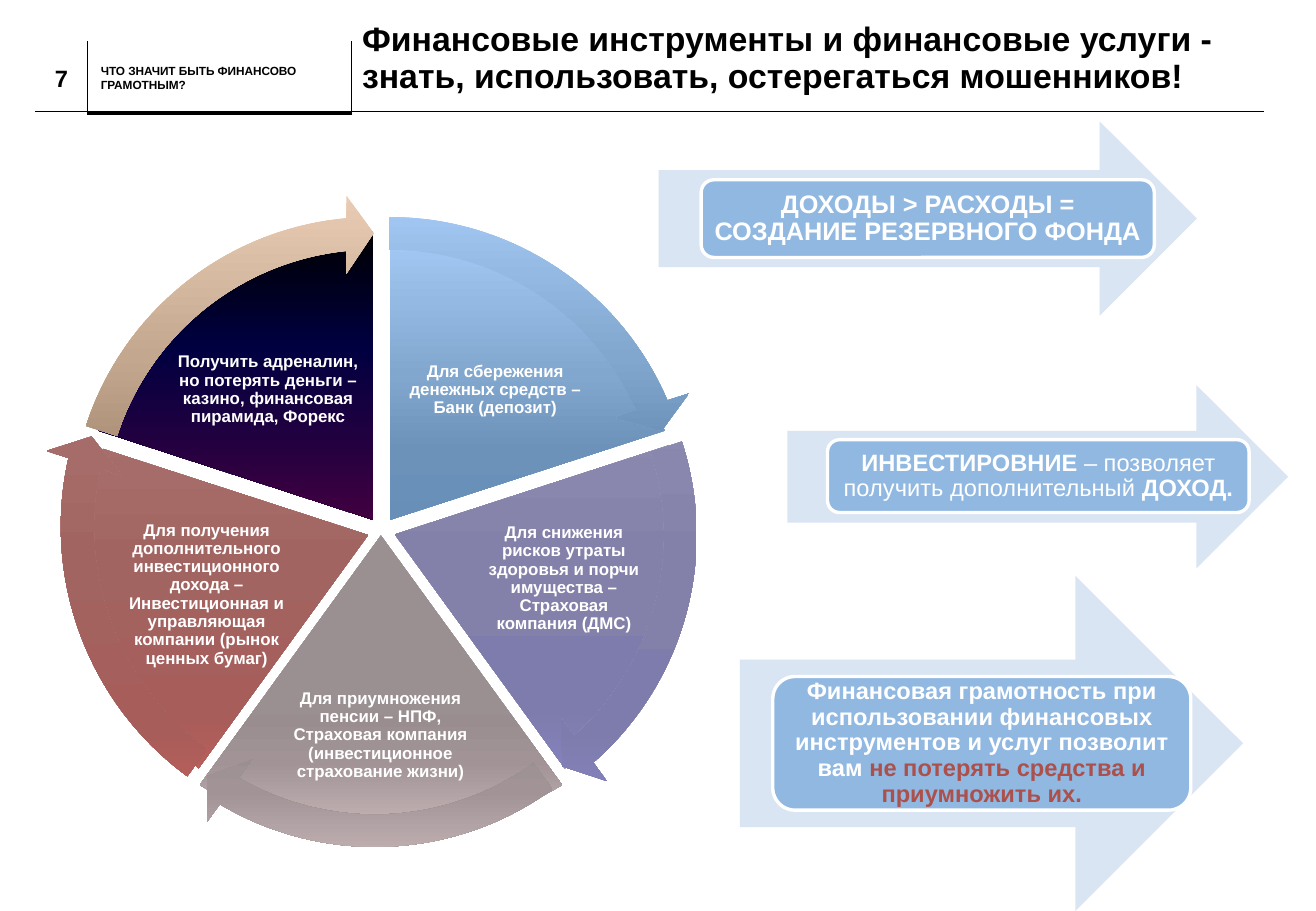
"""Build the slide on financial instruments and services."""
from dataclasses import dataclass

from lxml import etree
from pptx import Presentation
from pptx import util as u
from pptx.dml.color import RGBColor
from pptx.enum import shapes, text
from pptx.oxml.ns import qn

FONT = "Arial"
BLACK, WHITE, RED = "000000", "FFFFFF", "AC504C"
ARROW_FILL, PLATE_FILL = "DAE5F3", "89B4E0"
FULL_TURN = 216.0
SECTOR_ANGLE = FULL_TURN / 5
FIRST_ANGLE = 162.0
ARROW_HEAD_ANGLE = 3.27
METAL_STOPS = (0, 25, 38, 55, 80, 88, 100)
NIGHT_STOPS = (0, 20, 50, 75, 90, 100)

Box = tuple[float, float, float, float]


@dataclass(frozen=True)
class Gradient:
    colors: str
    stops: tuple[int, ...] = METAL_STOPS


@dataclass(frozen=True)
class Run:
    words: str
    bold: bool = True
    color: str = WHITE


@dataclass(frozen=True)
class Sector:
    caption: str
    caption_box: Box
    slice_box: Box
    arrow_box: Box
    slice_fill: Gradient
    arrow_fill: Gradient


@dataclass(frozen=True)
class Conclusion:
    arrow_box: Box
    plate_box: Box
    size: float
    runs: tuple[Run, ...]


BLUE = Gradient("A6CBF6 81A7CE 6C92BA 648DB6 5B8CBD 5B93CD 73B5F8")
VIOLET = Gradient("C0BEE8 9E9DC3 8987AD 8381A9 7E7CAC 8280B8 A29FE0")
GREY = Gradient("D7CDCE B4AAAC 9E9496 9A8F91 998D8F A29496 C7B6B9")
BRICK = Gradient("E3A8A6 B97F7D A66C69 A26461 A75D5A B55E5A DB7772")
SAND = Gradient("E9CCB3 C3A88F AE937A AA8E73 AE8C6D BB946F E3B58B")
NIGHT = Gradient("000000 000040 400040 8F0040 F27300 FFBF00", NIGHT_STOPS)

SECTORS = (
    Sector("Для сбережения денежных средств – Банк (депозит)",
           (3.31, 2.7, 1.53, 1.02), (0.83, 1.9, 4.76, 4.76), (0.53, 1.6, 5.35, 5.35), BLUE, BLUE),
    Sector("Для снижения рисков утраты здоровья и порчи имущества – Страховая компания (ДМС)",
           (3.93, 4.2, 1.42, 1.13), (0.87, 2.02, 4.76, 4.76), (0.57, 1.73, 5.35, 5.35), VIOLET, VIOLET),
    Sector("Для приумножения пенсии – НПФ, Страховая компания (инвестиционное страхование жизни)",
           (2.36, 5.41, 1.54, 1.29), (0.43, 1.95, 5.41, 4.92), (0.41, 1.81, 5.35, 5.35), GREY, GREY),
    Sector("Для получения дополнительного инвестиционного дохода – Инвестиционная и "
           "управляющая компании (рынок ценных бумаг)",
           (1.02, 4.32, 1.36, 1.15), (0.75, 1.98, 4.56, 4.85), (0.31, 1.6, 5.45, 5.47), BRICK, BRICK),
    Sector("Получить адреналин, но потерять деньги – казино, финансовая пирамида, Форекс",
           (1.44, 2.7, 1.53, 1.02), (0.69, 1.9, 4.76, 4.76), (0.4, 1.6, 5.35, 5.35), NIGHT, SAND),
)

CONCLUSIONS = (
    Conclusion((5.42, 1, 4.43, 1.6), (5.77, 1.48, 3.73, 0.64), 15,
               (Run("ДОХОДЫ > РАСХОДЫ = СОЗДАНИЕ РЕЗЕРВНОГО ФОНДА"),)),
    Conclusion((6.48, 3.17, 4.12, 1.51), (6.81, 3.62, 3.47, 0.6), 14,
               (Run("ИНВЕСТИРОВНИЕ"), Run(" – позволяет получить дополнительный ", bold=False),
                Run("ДОХОД."))),
    Conclusion((6.09, 4.74, 4.14, 2.76), (6.36, 5.57, 3.44, 1.1), 14,
               (Run("Финансовая грамотность при использовании финансовых инструментов и услуг "
                    "позволит вам "),
                Run("не потерять средства и приумножить их.", color=RED))),
)

HEADER_RULES = (
    ((0.72, 0.92), (0.29, 0.92), 0.25),
    ((2.9, 0.93), (0.72, 0.93), 2.25),
    ((10.4, 0.92), (2.88, 0.92), 0.25),
    ((0.72, 0.93), (0.72, 0.34), 0.25),
    ((2.89, 0.93), (2.89, 0.34), 0.25),
)


def rgb(color: str) -> RGBColor:
    return RGBColor.from_string(color)


def inches(box: Box) -> list[u.Length]:
    return [u.Inches(length) for length in box]


def add_text(slide, box: Box, runs: tuple[Run, ...], *, size: float, centered: bool = True,
             inset: float = 0, spacing: float = 0.9) -> None:
    frame = slide.shapes.add_textbox(*inches(box)).text_frame
    frame.word_wrap = True
    frame.vertical_anchor = text.MSO_ANCHOR.MIDDLE
    frame.margin_left = frame.margin_right = u.Inches(inset)
    frame.margin_top = frame.margin_bottom = u.Inches(inset)
    paragraph = frame.paragraphs[0]
    paragraph.alignment = text.PP_ALIGN.CENTER if centered else text.PP_ALIGN.LEFT
    paragraph.line_spacing = spacing
    for part in runs:
        for index, line in enumerate(part.words.split("\n")):
            if index:
                paragraph.add_line_break()
            run = paragraph.add_run()
            run.text = line
            run.font.name, run.font.size, run.font.bold = FONT, u.Pt(size), part.bold
            run.font.color.rgb = rgb(part.color)


def add_figure(slide, kind: shapes.MSO_SHAPE, box: Box, fill: str | Gradient,
               adjustments: tuple[float, ...] = ()):
    figure = slide.shapes.add_shape(kind, *inches(box))
    figure.shadow.inherit = False
    figure.line.fill.background()
    for index, value in enumerate(adjustments):
        figure.adjustments[index] = value
    if isinstance(fill, Gradient):
        apply_gradient(figure, fill)
    else:
        figure.fill.solid()
        figure.fill.fore_color.rgb = rgb(fill)
    return figure


def apply_gradient(figure, gradient: Gradient) -> None:
    figure.fill.gradient()
    figure.fill.gradient_angle = 270
    stop_list = figure._element.spPr.find(".//" + qn("a:gsLst"))
    for stop in list(stop_list):
        stop_list.remove(stop)
    for position, color in zip(gradient.stops, gradient.colors.split()):
        stop = etree.SubElement(stop_list, qn("a:gs"), pos=str(position * 1000))
        etree.SubElement(stop, qn("a:srgbClr"), val=color)


def add_rule(slide, start: tuple[float, float], end: tuple[float, float], width: float) -> None:
    rule = slide.shapes.add_connector(shapes.MSO_CONNECTOR.STRAIGHT, *inches(start + end))
    rule.line.color.rgb = rgb(BLACK)
    rule.line.width = u.Pt(width)
    etree.SubElement(rule._element.spPr, qn("a:effectLst"))


def add_header(slide) -> None:
    for start, end, width in HEADER_RULES:
        add_rule(slide, start, end, width)
    add_text(slide, (0.83, 0.52, 2.03, 0.24), (Run("ЧТО ЗНАЧИТ БЫТЬ ФИНАНСОВО ГРАМОТНЫМ?", color=BLACK),),
             size=7, centered=False, spacing=1.0)
    add_text(slide, (2.98, 0, 7.7, 0.97),
             (Run("Финансовые инструменты и финансовые услуги -\n"
                  "знать, использовать, остерегаться мошенников!", color=BLACK),),
             size=20, centered=False)
    add_text(slide, (0.29, 0.44, 0.43, 0.4), (Run("7", color=BLACK),), size=14, spacing=1.0)


def add_wheel(slide) -> None:
    angles = [(FIRST_ANGLE + SECTOR_ANGLE * i) % FULL_TURN for i in range(len(SECTORS))]
    for sector, start in zip(SECTORS, angles):
        end = (start + SECTOR_ANGLE) % FULL_TURN
        add_figure(slide, shapes.MSO_SHAPE.PIE, sector.slice_box, sector.slice_fill, (start, end))
        add_text(slide, sector.caption_box, (Run(sector.caption),), size=10, inset=0.01)
    for sector, start in zip(SECTORS, angles):
        tip = (start + SECTOR_ANGLE) % FULL_TURN - ARROW_HEAD_ANGLE
        add_figure(slide, shapes.MSO_SHAPE.CIRCULAR_ARROW, sector.arrow_box, sector.arrow_fill,
                   (0.05, ARROW_HEAD_ANGLE, tip, start, 0.06))


def add_conclusion(slide, conclusion: Conclusion) -> None:
    add_figure(slide, shapes.MSO_SHAPE.RIGHT_ARROW, conclusion.arrow_box, ARROW_FILL)
    plate = add_figure(slide, shapes.MSO_SHAPE.ROUNDED_RECTANGLE, conclusion.plate_box, PLATE_FILL)
    plate.line.color.rgb = rgb(WHITE)
    plate.line.width = u.Pt(2)
    fill_color = plate._element.spPr.find(qn("a:solidFill")).find(qn("a:srgbClr"))
    etree.SubElement(fill_color, qn("a:alpha"), val="90000")
    left, top, width, height = conclusion.plate_box
    add_text(slide, (left + 0.03, top + 0.03, width - 0.06, height - 0.06), conclusion.runs,
             size=conclusion.size, inset=0.06)


def main() -> None:
    deck = Presentation()
    deck.slide_width, deck.slide_height = u.Inches(10.83), u.Inches(7.5)
    slide = deck.slides.add_slide(deck.slide_layouts[6])
    add_header(slide)
    add_wheel(slide)
    for conclusion in CONCLUSIONS:
        add_conclusion(slide, conclusion)
    deck.save("out.pptx")


if __name__ == "__main__":
    main()
